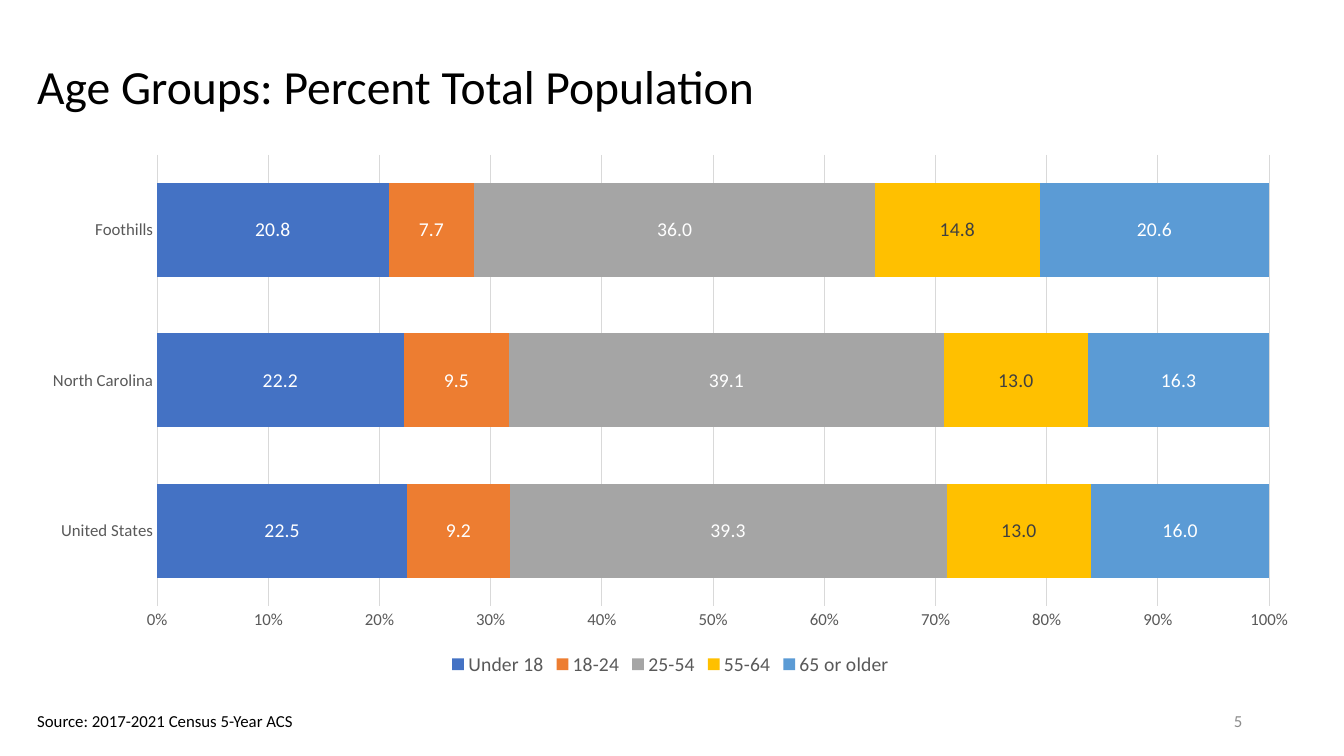
from dataclasses import dataclass

from pptx import Presentation
from pptx import util as u
from pptx.chart import data as chart_data
from pptx.dml import color
from pptx.enum import chart as ch
from pptx.enum import text


@dataclass(frozen=True)
class Theme:
    """Colours, font and type sizes of the slide."""
    font: str = "Calibri"
    ink: str = "000000"
    label: str = "595959"
    page: str = "8C8C8C"
    rule: str = "D9D9D9"
    light: str = "FFFFFF"
    dark: str = "404040"
    title_size: int = 34
    value_size: int = 14
    small_size: int = 12


THEME = Theme()
REGIONS = ["United States", "North Carolina", "Foothills"]
AGE_GROUPS = [
    ("Under 18", (22.5, 22.2, 20.8), "4472C4", THEME.light),
    ("18-24", (9.2, 9.5, 7.7), "ED7D31", THEME.light),
    ("25-54", (39.3, 39.1, 36.0), "A5A5A5", THEME.light),
    ("55-64", (13.0, 13.0, 14.8), "FFC000", THEME.dark),
    ("65 or older", (16.0, 16.3, 20.6), "5B9BD5", THEME.light),
]


def set_font(font, size, rgb):
    """Apply the theme font with a size and colour."""
    font.name = THEME.font
    font.size = u.Pt(size)
    font.bold = False
    font.color.rgb = color.RGBColor.from_string(rgb)


def set_rule(line):
    """Draw a line as a thin light rule."""
    line.color.rgb = color.RGBColor.from_string(THEME.rule)
    line.width = u.Pt(0.75)


def add_label(slide, place, wording, size, rgb, wrap=True,
              anchor=text.MSO_ANCHOR.MIDDLE, align=text.PP_ALIGN.LEFT):
    """Add a one-line text box and return its paragraph."""
    frame = slide.shapes.add_textbox(*map(u.Inches, place)).text_frame
    frame.word_wrap = wrap
    frame.vertical_anchor = anchor
    frame.text = wording
    line = frame.paragraphs[0]
    line.alignment = align
    set_font(line.runs[0].font, size, rgb)
    return line


def style_axes(chart):
    """Style the region axis and the percent axis."""
    for axis in (chart.category_axis, chart.value_axis):
        axis.major_tick_mark = axis.minor_tick_mark = ch.XL_TICK_MARK.NONE
        set_font(axis.tick_labels.font, THEME.small_size, THEME.label)
    set_rule(chart.category_axis.format.line)
    percent = chart.value_axis
    percent.minimum_scale, percent.maximum_scale, percent.major_unit = 0, 1, 0.1
    percent.format.line.fill.background()
    percent.has_major_gridlines = True
    set_rule(percent.major_gridlines.format.line)
    percent.tick_labels.number_format = "0%"
    percent.tick_labels.number_format_is_linked = False


def style_series(series, fill_rgb, label_rgb):
    """Colour one age group and show its values."""
    series.format.fill.solid()
    series.format.fill.fore_color.rgb = color.RGBColor.from_string(fill_rgb)
    series.invert_if_negative = False
    labels = series.data_labels
    labels.show_value = True
    labels.number_format = "#,##0.0"
    labels.number_format_is_linked = False
    set_font(labels.font, THEME.value_size, label_rgb)


def add_age_chart(slide, place):
    """Add the stacked bars of age shares by region."""
    shares = chart_data.CategoryChartData(number_format="#,##0.0")
    shares.categories = REGIONS
    for name, values, _, _ in AGE_GROUPS:
        shares.add_series(name, values)
    chart = slide.shapes.add_chart(
        ch.XL_CHART_TYPE.BAR_STACKED_100, *map(u.Inches, place), shares).chart
    set_font(chart.font, 10, THEME.ink)
    chart.has_title = False
    bars = chart.plots[0]
    bars.gap_width, bars.overlap = 60, 100
    bars.vary_by_categories = False
    style_axes(chart)
    for series, (_, _, fill_rgb, label_rgb) in zip(bars.series, AGE_GROUPS):
        style_series(series, fill_rgb, label_rgb)
    chart.has_legend = True
    chart.legend.position = ch.XL_LEGEND_POSITION.BOTTOM
    chart.legend.include_in_layout = False
    set_font(chart.legend.font, THEME.value_size, THEME.label)


def main():
    """Build and save the age group slide."""
    deck = Presentation()
    deck.slide_width, deck.slide_height = u.Inches(13.33), u.Inches(7.5)
    slide = deck.slides.add_slide(deck.slide_layouts[6])
    title = add_label(slide, (0.27, 0.34, 12.76, 1.09),
                      "Age Groups: Percent Total Population",
                      THEME.title_size, THEME.ink)
    title.line_spacing = 0.9
    add_age_chart(slide, (0.27, 1.43, 12.76, 5.32))
    add_label(slide, (9.42, 6.95, 3, 0.4), "5", THEME.small_size, THEME.page,
              align=text.PP_ALIGN.RIGHT)
    add_label(slide, (0.27, 7, 2.78, 0.3), "Source: 2017-2021 Census 5-Year ACS",
              THEME.small_size, THEME.ink, wrap=False,
              anchor=text.MSO_ANCHOR.TOP)
    deck.save("out.pptx")


if __name__ == "__main__":
    main()
